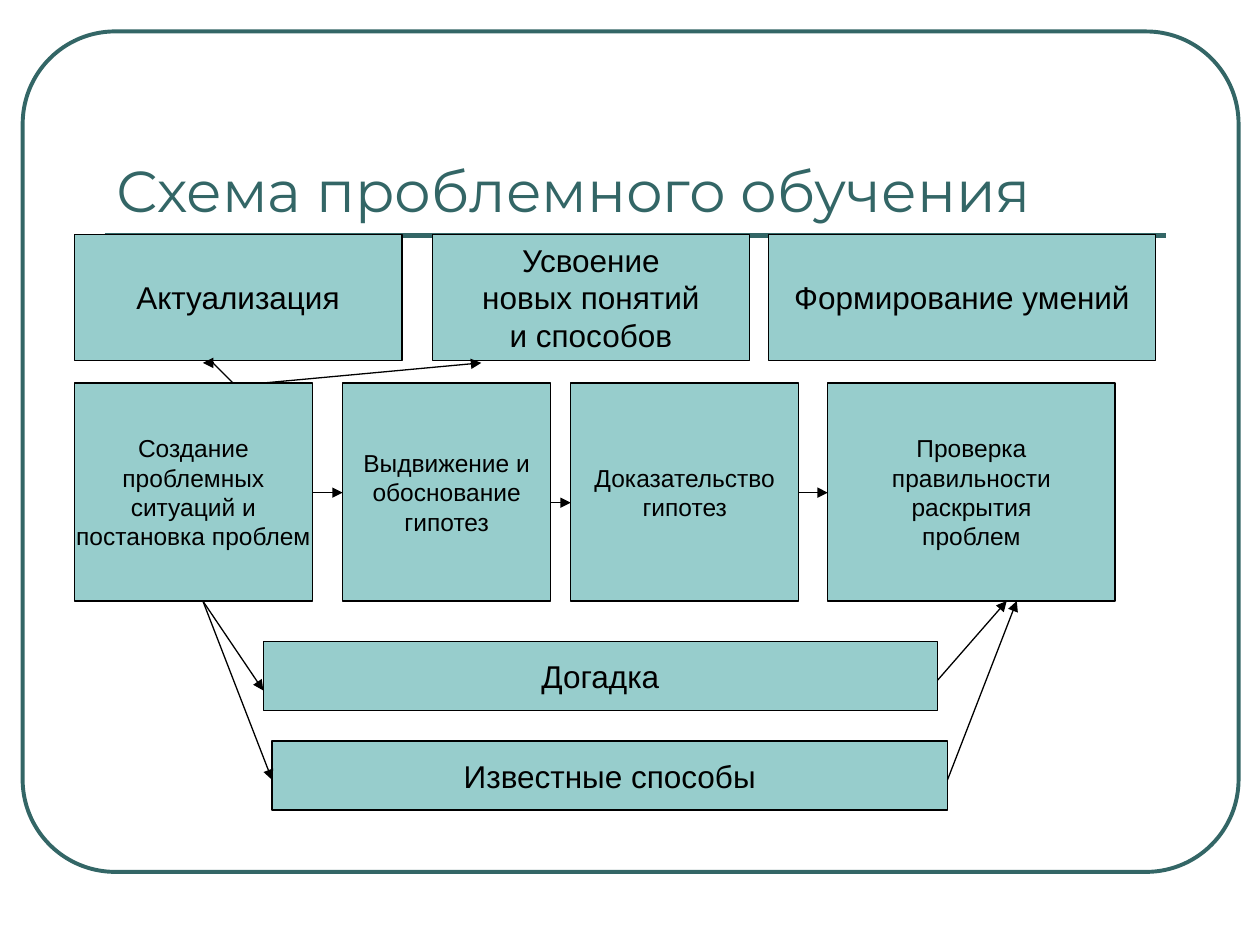
from dataclasses import dataclass

from lxml.etree import SubElement
from pptx import Presentation
from pptx.dml.color import RGBColor
from pptx.enum.shapes import MSO_CONNECTOR, MSO_SHAPE
from pptx.enum.text import MSO_ANCHOR, PP_ALIGN
from pptx.oxml.ns import qn
from pptx.util import Inches, Pt

TEAL = RGBColor(0x33, 0x66, 0x66)
AQUA = RGBColor(0x97, 0xCD, 0xCC)
BLACK = RGBColor(0, 0, 0)


@dataclass
class Box:
    left: float
    top: float
    width: float
    height: float
    size: int
    lines: tuple[str, ...]


@dataclass
class Line:
    x1: float
    y1: float
    x2: float
    y2: float
    arrow: bool = True
    color: RGBColor = BLACK
    weight: float = 0.75


def write(shape, lines, anchor, align, wrap, **font) -> None:
    tf = shape.text_frame
    for name, value in {"word_wrap": wrap, "vertical_anchor": anchor}.items():
        setattr(tf, name, value)
    color = font.pop("color")
    for i, line in enumerate(lines):
        p = tf.paragraphs[0] if i == 0 else tf.add_paragraph()
        p.alignment = align
        r = p.add_run()
        r.text = line
        for name, value in font.items():
            setattr(r.font, name, value)
        r.font.color.rgb = color


def draw_box(slide, box: Box) -> None:
    sp = slide.shapes.add_shape(
        MSO_SHAPE.RECTANGLE, Inches(box.left), Inches(box.top),
        Inches(box.width), Inches(box.height))
    sp.shadow.inherit = False
    sp.fill.solid()
    sp.fill.fore_color.rgb = AQUA
    sp.line.color.rgb = BLACK
    sp.line.width = Pt(0.75)
    write(sp, box.lines, MSO_ANCHOR.MIDDLE, PP_ALIGN.CENTER, False,
          size=Pt(box.size), name="Arial", color=BLACK)


def draw_line(slide, line: Line) -> None:
    cxn = slide.shapes.add_connector(
        MSO_CONNECTOR.STRAIGHT, Inches(line.x1), Inches(line.y1),
        Inches(line.x2), Inches(line.y2))
    cxn.line.color.rgb = line.color
    cxn.line.width = Pt(line.weight)
    if line.arrow:
        SubElement(cxn.line._get_or_add_ln(), qn("a:tailEnd"), type="triangle")
    SubElement(cxn._element.spPr, qn("a:effectLst"))


def draw_frame(slide) -> None:
    sp = slide.shapes.add_shape(MSO_SHAPE.ROUNDED_RECTANGLE, Inches(0.18),
                                Inches(0.25), Inches(9.65), Inches(6.67))
    sp.adjustments[0] = 0.11
    sp.shadow.inherit = False
    sp.fill.background()
    sp.line.color.rgb = TEAL
    sp.line.width = Pt(2.25)


# Rows of the scheme: lesson stages, problem steps, ways of solving
STAGE = {"top": 1.86, "height": 1, "size": 18}
STEP = {"top": 3.04, "height": 1.73, "size": 14}
WAY = {"height": 0.55, "size": 18}
BOXES = [
    Box(left=0.59, width=2.6, lines=("Актуализация",), **STAGE),
    Box(left=3.43, width=2.52,
        lines=("Усвоение", "новых понятий", "и способов"), **STAGE),
    Box(left=6.1, width=3.07, lines=("Формирование умений",), **STAGE),
    Box(left=0.59, width=1.89, lines=(
        "Создание", "проблемных", "ситуаций и", "постановка проблем"), **STEP),
    Box(left=2.72, width=1.65,
        lines=("Выдвижение и", "обоснование", "гипотез"), **STEP),
    Box(left=4.53, width=1.81, lines=("Доказательство", "гипотез"), **STEP),
    Box(left=6.57, width=2.28, lines=(
        "Проверка", "правильности", "раскрытия", "проблем"), **STEP),
    Box(left=2.09, top=5.09, width=5.35, lines=("Догадка",), **WAY),
    Box(left=2.16, top=5.88, width=5.36, lines=("Известные способы",), **WAY),
]

LINES = [
    # Steps up to stages
    Line(1.69, 2.88, 1.61, 2.88),
    Line(1.69, 2.88, 1.85, 3.04, arrow=False),
    Line(2.16, 3.04, 2.16, 3.04),
    Line(2.09, 3.04, 3.82, 2.88),
    # Step to step
    Line(2.48, 3.91, 2.72, 3.91),
    Line(4.45, 3.91, 4.45, 3.91),
    Line(4.37, 3.99, 4.53, 3.99),
    Line(6.34, 3.91, 6.57, 3.91),
    # Down to the ways of solving and back up
    Line(1.61, 4.77, 2.09, 5.48),
    Line(1.61, 4.77, 2.16, 6.19),
    Line(7.44, 5.4, 7.99, 4.77),
    Line(7.52, 6.19, 8.07, 4.77),
]


def main() -> None:
    prs = Presentation()
    prs.slide_width, prs.slide_height = Inches(10), Inches(7.5)
    slide = prs.slides.add_slide(prs.slide_layouts[6])

    # Frame, title and its rule
    draw_frame(slide)
    draw_line(slide, Line(0.83, 1.87, 9.25, 1.87, False, TEAL, 3))
    title = slide.shapes.add_textbox(Inches(0.83), Inches(0.58),
                                     Inches(8.42), Inches(1.25))
    write(title, ("Схема проблемного обучения",), MSO_ANCHOR.BOTTOM,
          PP_ALIGN.LEFT, True, size=Pt(33), name="Montserrat", color=TEAL)

    # Scheme
    for box in BOXES:
        draw_box(slide, box)
    for line in LINES:
        draw_line(slide, line)
    prs.save("out.pptx")


if __name__ == "__main__":
    main()
